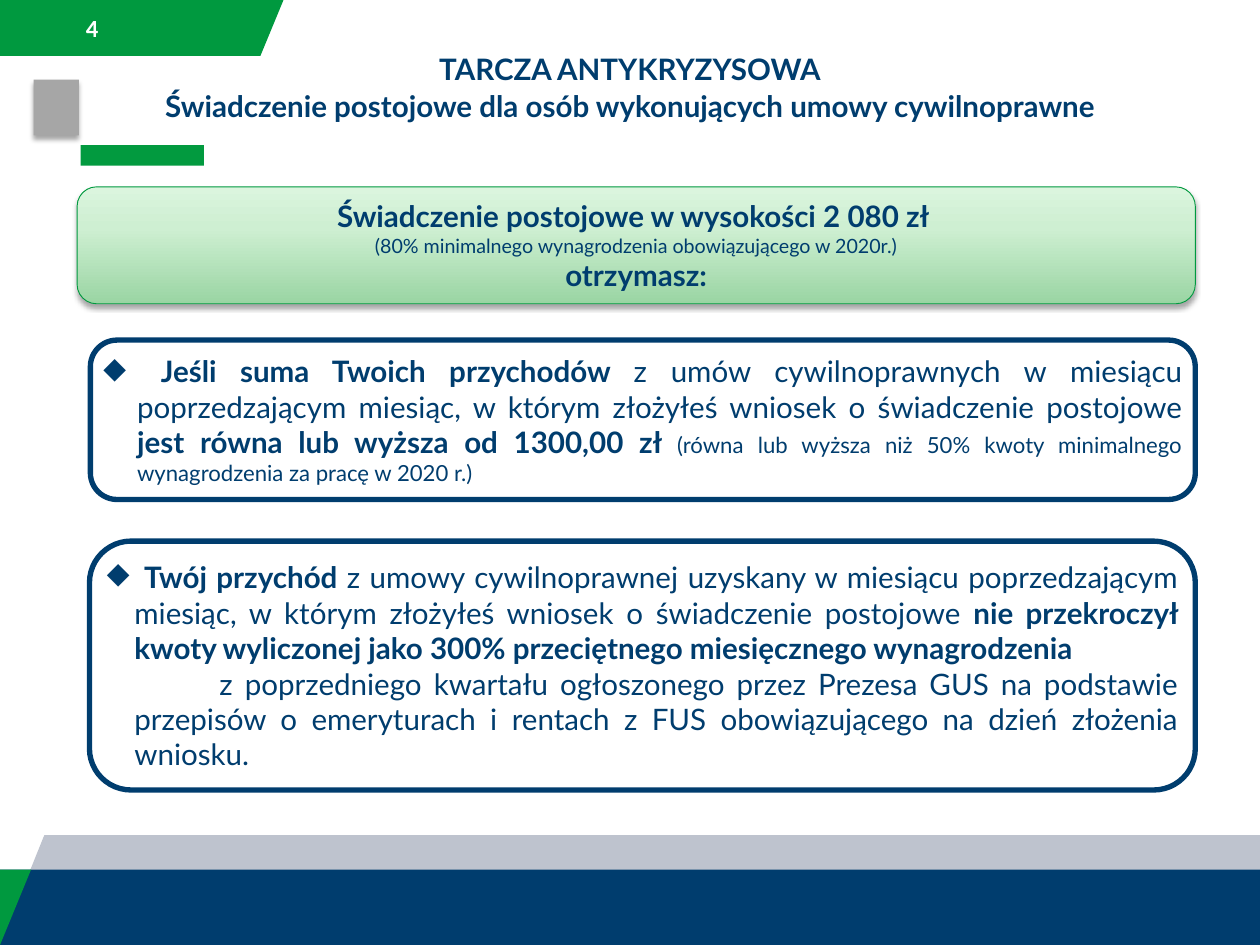
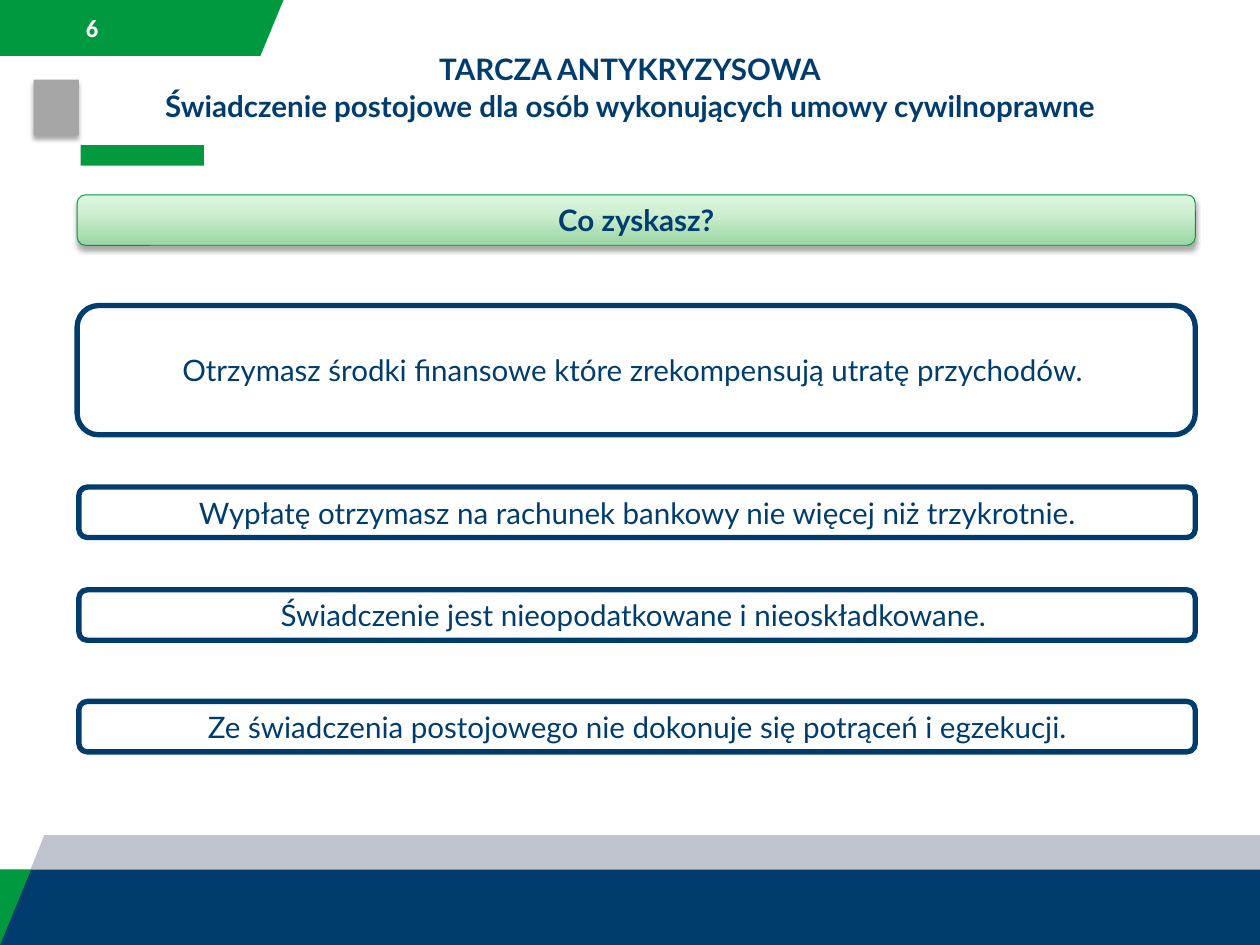
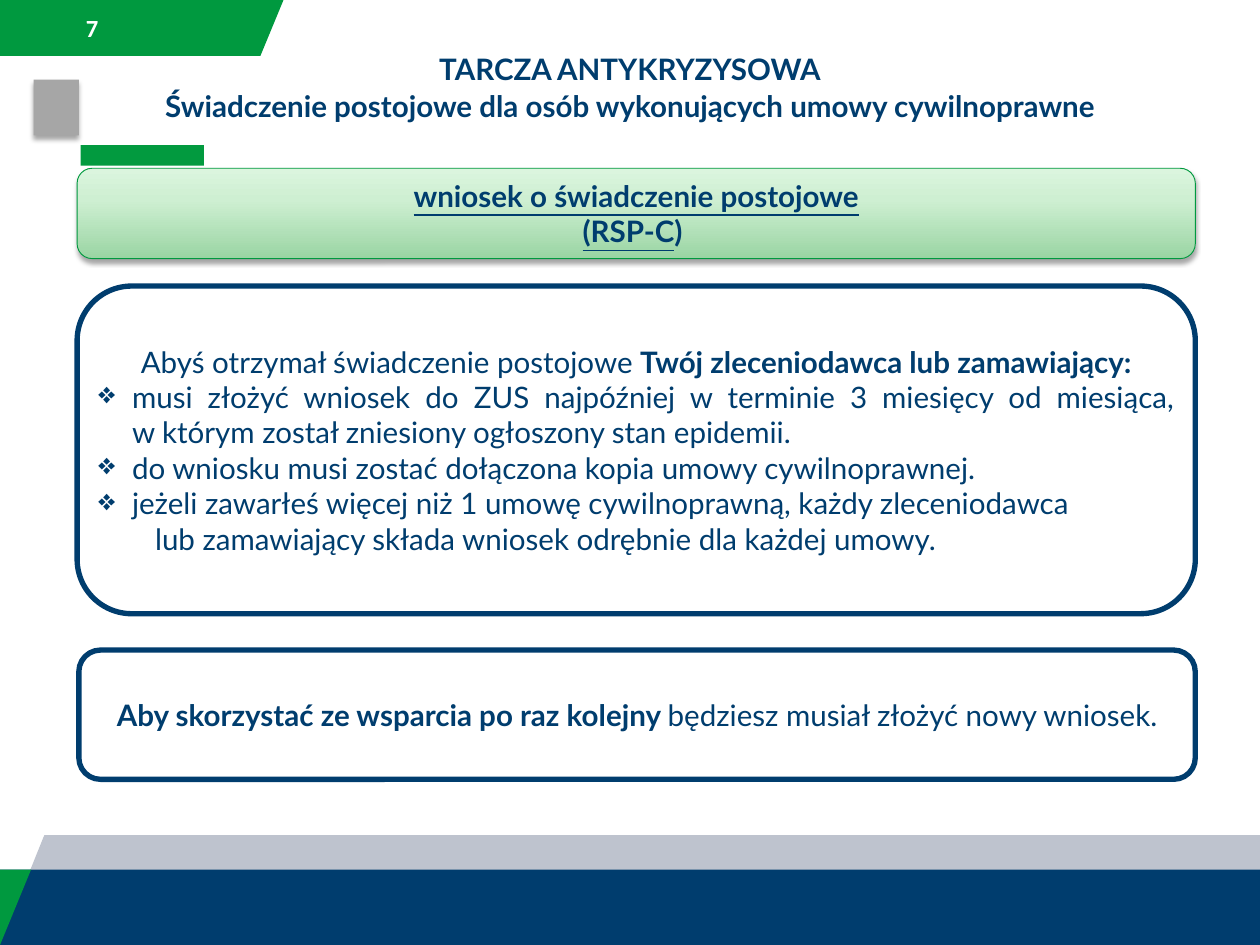
"""Build three slides about the standstill benefit for civil-law contracts."""
import pptx
import pptx.dml.color
import pptx.enum.shapes
import pptx.enum.text
import pptx.oxml
import pptx.oxml.ns
import pptx.util

Inches = pptx.util.Inches
Pt = pptx.util.Pt
qn = pptx.oxml.ns.qn
FORM = pptx.enum.shapes.MSO_SHAPE
ALIGN = pptx.enum.text.PP_ALIGN
ANCHOR = pptx.enum.text.MSO_ANCHOR

NAVY, GREEN, LIME, WHITE = "003D6E", "00993F", "029A3F", "FFFFFF"
SILVER, GREY = "BEC3CE", "A6A6A6"
WIDE, HIGH, RIGHT = 14.22, 10.67, 13.49
XMLNS = 'xmlns:a="http://schemas.openxmlformats.org/drawingml/2006/main"'
SHADE = (f'<a:outerShdw {XMLNS} blurRad="50800" dist="38100" dir="5400000" rotWithShape="0">'
         '<a:srgbClr val="000000"><a:alpha val="35000"/></a:srgbClr></a:outerShdw>')
STOPS = [(0, "9AD5A3"), (65, "CEEFD2"), (100, "DBF5DE")]

STYLES = {
    "mid": (ALIGN.CENTER, None, 0, 0),
    "gem": (ALIGN.JUSTIFY, "◆", 0.38, -0.38),
    "tight": (ALIGN.JUSTIFY, "◆", 0.31, -0.31),
    "next": (ALIGN.JUSTIFY, None, 0.31, 0.96),
    "star": (ALIGN.JUSTIFY, "❖", 0.38, -0.38),
    "tail": (ALIGN.JUSTIFY, None, 0.38, 0.26),
}


def tint(code):
    return pptx.dml.color.RGBColor.from_string(code)


def write(frame, paras, face="Lato", code=NAVY):
    frame.word_wrap = True
    for i, (style, runs) in enumerate(paras):
        para = frame.paragraphs[0] if i == 0 else frame.add_paragraph()
        align, mark, left, first = STYLES[style]
        para.alignment = align
        props = para._p.get_or_add_pPr()
        props.set("marL", str(Inches(left)))
        props.set("indent", str(Inches(first)))
        if mark:
            props.append(pptx.oxml.parse_xml(f'<a:buChar {XMLNS} char="{mark}"/>'))
        for text, size, flags in runs:
            if text == "\n":
                para.add_line_break()
                continue
            run = para.add_run()
            run.text = text
            run.font.name = face
            run.font.size = Pt(size)
            run.font.bold = "b" in flags
            run.font.underline = "u" in flags
            run.font.color.rgb = tint(code)


TITLE = [
    ("mid", [("TARCZA ANTYKRYZYSOWA", 24, "b")]),
    ("mid", [("Świadczenie postojowe dla osób wykonujących umowy cywilnoprawne", 24, "b")]),
]

PAGES = [
    ("4", [
        (0.87, 2.11, 1.32, "head", [
            ("mid", [("Świadczenie postojowe w wysokości 2 080 zł ", 24, "b")]),
            ("mid", [("(80% minimalnego wynagrodzenia obowiązującego w 2020r.)", 16, "")]),
            ("mid", [("otrzymasz:", 24, "b")]),
        ]),
        (1.02, 3.84, 1.8, "card", [
            ("gem", [
                (" ", 24, ""),
                ("Jeśli suma Twoich przychodów ", 24, "b"),
                ("z umów cywilnoprawnych w miesiącu poprzedzającym miesiąc, "
                 "w którym złożyłeś wniosek o świadczenie postojowe ", 24, ""),
                ("jest równa lub wyższa od 1300,00 zł ", 24, "b"),
                ("(równa lub wyższa niż 50% kwoty minimalnego wynagrodzenia "
                 "za pracę w 2020 r.)", 18, ""),
            ]),
        ]),
        (1.01, 6.11, 2.81, "card", [
            ("tight", [
                (" ", 24, ""),
                ("Twój przychód ", 24, "b"),
                ("z umowy cywilnoprawnej uzyskany w miesiącu poprzedzającym miesiąc, "
                 "w którym złożyłeś wniosek o świadczenie postojowe ", 24, ""),
                ("nie przekroczył kwoty wyliczonej jako 300% przeciętnego "
                 "miesięcznego wynagrodzenia", 24, "b"),
            ]),
            ("next", [
                ("z poprzedniego kwartału ogłoszonego przez Prezesa GUS na podstawie "
                 "przepisów o emeryturach i rentach z FUS obowiązującego na dzień "
                 "złożenia wniosku.", 24, ""),
            ]),
        ]),
    ]),
    ("6", [
        (0.87, 2.2, 0.57, "head", [("mid", [("Co zyskasz?", 24, "b")])]),
        (0.87, 3.45, 1.46, "card", [
            ("mid", [("Otrzymasz środki finansowe które zrekompensują utratę przychodów. ", 24, "")]),
        ]),
        (0.89, 5.5, 0.57, "card", [
            ("mid", [("Wypłatę otrzymasz na rachunek bankowy nie więcej niż trzykrotnie.", 24, "")]),
        ]),
        (0.89, 6.66, 0.57, "card", [
            ("mid", [("Świadczenie jest nieopodatkowane i nieoskładkowane. ", 24, "")]),
        ]),
        (0.89, 7.92, 0.57, "card", [
            ("mid", [("Ze świadczenia postojowego nie dokonuje się potrąceń i egzekucji.", 24, "")]),
        ]),
    ]),
    ("7", [
        (0.87, 1.9, 1.02, "head", [
            ("mid", [("wniosek o świadczenie postojowe", 24, "bu")]),
            ("mid", [("(RSP-C", 24, "bu"), (") ", 24, "b")]),
        ]),
        (0.87, 3.23, 3.7, "card", [
            ("mid", [
                ("Abyś otrzymał świadczenie postojowe ", 24, ""),
                ("Twój zleceniodawca lub zamawiający:", 24, "b"),
            ]),
            ("star", [
                ("musi złożyć wniosek do ZUS najpóźniej w terminie 3 miesięcy od miesiąca,", 24, ""),
                ("\n", 24, ""),
                ("w którym został zniesiony ogłoszony stan epidemii.", 24, ""),
            ]),
            ("star", [("do wniosku musi zostać dołączona kopia umowy cywilnoprawnej.", 24, "")]),
            ("star", [("jeżeli zawarłeś więcej niż 1 umowę cywilnoprawną, każdy zleceniodawca", 24, "")]),
            ("tail", [("lub zamawiający składa wniosek odrębnie dla każdej umowy.", 24, "")]),
        ]),
        (0.89, 7.34, 1.46, "card", [
            ("mid", [
                ("Aby skorzystać ze wsparcia po raz kolejny ", 24, "b"),
                ("będziesz musiał złożyć nowy wniosek.", 24, ""),
            ]),
        ]),
    ]),
]

deck = pptx.Presentation()
deck.slide_width, deck.slide_height = Inches(WIDE), Inches(HIGH)
layout = deck.slide_layouts[5]
for holder in list(layout.placeholders)[1:]:
    layout.shapes.element.remove(holder.element)
title = layout.placeholders[0]
title.left, title.top = Inches(0.81), Inches(0.53)
title.width, title.height = Inches(12.6), Inches(1.34)

slides = [deck.slides.add_slide(layout) for page in PAGES]

stage = slides[0].shapes
bands = [
    (GREEN, [(0, 0), (3.2, 0), (2.94, 0.63), (0, 0.63)]),
    (SILVER, [(0, HIGH), (0.5, 9.43), (WIDE, 9.43), (WIDE, HIGH)]),
    (NAVY, (0, 9.82, WIDE, 0.85)),
    (GREEN, [(0, 9.82), (0, HIGH), (0.35, 9.82)]),
    (LIME, (0.91, 1.64, 1.39, 0.23)),
    (GREY, (0.38, 0.9, 0.51, 0.63)),
]
for code, form in bands:
    if isinstance(form, list):
        points = [(Inches(x), Inches(y)) for x, y in form]
        pen = stage.build_freeform(*points[0])
        pen.add_line_segments(points[1:], close=True)
        band = pen.convert_to_shape()
    else:
        band = stage.add_shape(FORM.RECTANGLE, *map(Inches, form))
    band.shadow.inherit = False
    band.fill.solid()
    band.fill.fore_color.rgb = tint(code)
    band.line.fill.background()
    if code == GREY:
        band.element.spPr.find(qn("a:effectLst")).append(pptx.oxml.parse_xml(SHADE))
for band in list(stage)[1:]:
    layout.shapes.element.append(band.element)

for slide, (number, boxes) in zip(slides, PAGES):
    frame = slide.shapes.title.text_frame
    write(frame, TITLE)
    frame.auto_size = pptx.enum.text.MSO_AUTO_SIZE.NONE
    frame.vertical_anchor = ANCHOR.TOP
    frame.paragraphs[1].space_before = Pt(1)

    label = slide.shapes.add_textbox(*map(Inches, (0.91, 0.09, 0.85, 0.45)))
    frame = label.text_frame
    write(frame, [("mid", [(number, 20, "b")])], "Calibri", WHITE)
    frame.paragraphs[0].alignment = ALIGN.LEFT
    frame.vertical_anchor = ANCHOR.MIDDLE
    frame.margin_left = frame.margin_right = Inches(0.06)

    for left, top, height, look, paras in boxes:
        place = map(Inches, (left, top, RIGHT - left, height))
        box = slide.shapes.add_shape(FORM.ROUNDED_RECTANGLE, *place)
        box.shadow.inherit = False
        if look == "head":
            box.fill.gradient()
            box.fill.gradient_angle = 90
            stops = box.element.spPr.find(".//" + qn("a:gsLst"))
            stops.clear()
            for spot, code in STOPS:
                stops.append(pptx.oxml.parse_xml(
                    f'<a:gs {XMLNS} pos="{spot * 1000}"><a:srgbClr val="{code}"/></a:gs>'))
            box.line.color.rgb = tint(GREEN)
            box.line.width = Pt(0.75)
            box.element.spPr.find(qn("a:effectLst")).append(pptx.oxml.parse_xml(SHADE))
        else:
            box.fill.solid()
            box.fill.fore_color.rgb = tint(WHITE)
            box.line.color.rgb = tint(NAVY)
            box.line.width = Pt(4.33)
        frame = box.text_frame
        frame.margin_left = frame.margin_right = Inches(0.06)
        frame.margin_top = frame.margin_bottom = Inches(0.06)
        frame.vertical_anchor = ANCHOR.MIDDLE
        write(frame, paras)

deck.save("out.pptx")
